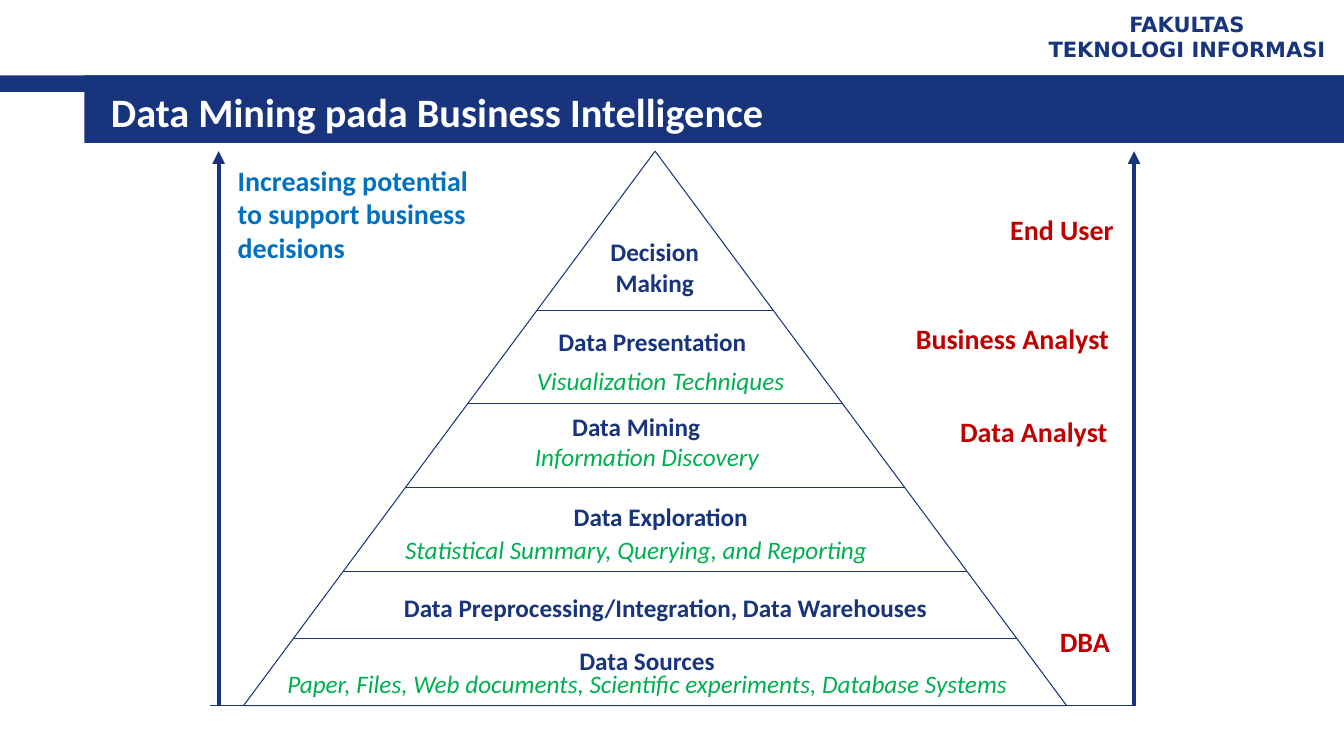
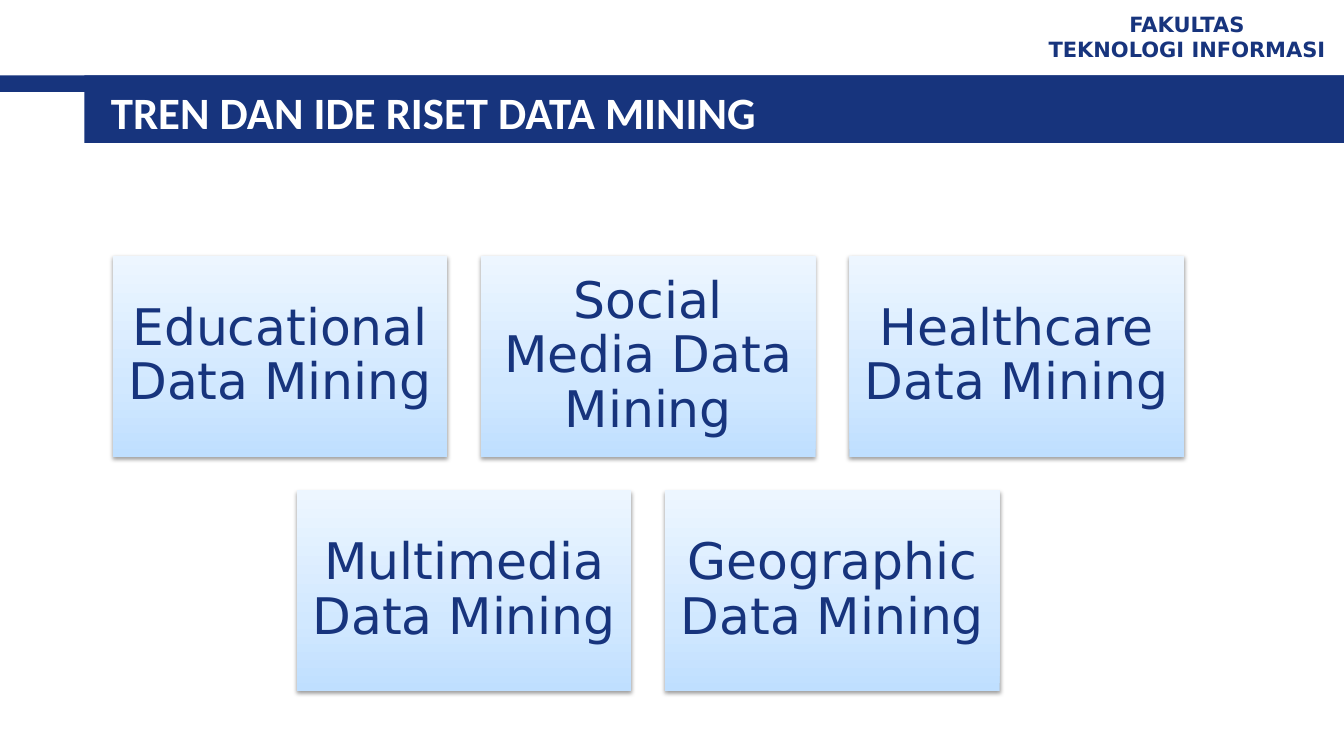
from lxml.etree import SubElement
from pptx import Presentation
from pptx.dml.color import RGBColor
from pptx.enum.shapes import MSO_CONNECTOR, MSO_SHAPE
from pptx.enum.text import MSO_ANCHOR, MSO_AUTO_SIZE, PP_ALIGN
from pptx.oxml import parse_xml
from pptx.oxml.ns import nsdecls, qn
from pptx.util import Cm, Pt

NAVY = RGBColor(0x17, 0x34, 0x7D)
BLUE = RGBColor(0x00, 0x70, 0xC0)
RED = RGBColor(0xC0, 0x00, 0x00)
GREEN = RGBColor(0x00, 0xB0, 0x50)
WHITE = RGBColor(0xFF, 0xFF, 0xFF)
SANS = "Calibri"
WIDE = "DejaVu Sans"
WIDTH, HEIGHT = 33.87, 19.05

# Pyramid: apex, base and half the base width, in cm
MID, TOP, BASE, HALF = 16.51, 3.81, 17.78, 10.37
LEVELS = (7.83, 10.16, 12.28, 14.39, 16.08)

# left, top, width, text
STAGES = (
    (13.82, 8.1, 5.28, "Data Presentation"),
    (14.17, 10.24, 4.95, "Data Mining"),
    (13.39, 12.5, 6.53, "Data Exploration"),
    (9.93, 14.81, 13.79, "Data Preprocessing/Integration, Data Warehouses"),
    (14.35, 16.13, 3.96, "Data Sources"),
)
METHODS = (
    (13.28, 9.09, 6.81, "Visualization Techniques"),
    (13.23, 11, 6.45, "Information Discovery"),
    (9.96, 13.34, 12.7, "Statistical Summary, Querying, and Reporting"),
    (6.99, 16.71, 19.76,
     "Paper, Files, Web documents, Scientific experiments, Database Systems"),
)
ROLES = (
    (25.02, 5.23, 3.3, "End User"),
    (21.16, 7.98, 7.04, "Business Analyst"),
    (23.11, 10.31, 5.05, "Data Analyst"),
    (26.22, 15.6, 2, "DBA"),
)
TOPIC_ROWS = (
    ("Educational Data Mining", "Social Media Data Mining",
     "Healthcare Data Mining"),
    ("Multimedia Data Mining", "Geographic Data Mining"),
)
STOPS = ((0, "BFDFFF"), (35, "D1E8FF"), (100, "EDF6FF"))


def style(para, size, color, face=SANS, bold=False, italic=False,
          align=PP_ALIGN.LEFT):
    para.alignment = align
    font = para.font
    font.name, font.size, font.color.rgb = face, Pt(size), color
    font.bold, font.italic = bold, italic


def add_label(slide, left, top, width, height, text, size, color, **look):
    box = slide.shapes.add_textbox(Cm(left), Cm(top), Cm(width), Cm(height))
    frame = box.text_frame
    frame.word_wrap = True
    frame.auto_size = MSO_AUTO_SIZE.SHAPE_TO_FIT_TEXT
    frame.text = text
    for para in frame.paragraphs:
        style(para, size, color, **look)
    return box


def add_shape(slide, kind, left, top, width, height):
    """Add a preset shape without outline or shadow."""
    shape = slide.shapes.add_shape(
        kind, Cm(left), Cm(top), Cm(width), Cm(height))
    shape.shadow.inherit = False
    shape.line.fill.background()
    return shape


def add_band(slide, left, height):
    band = add_shape(slide, MSO_SHAPE.RECTANGLE, left, 1.9,
                     WIDTH - left, height)
    band.fill.solid()
    band.fill.fore_color.rgb = NAVY
    return band


def add_line(slide, x1, y1, x2, y2, weight=0.75, arrow=False):
    line = slide.shapes.add_connector(
        MSO_CONNECTOR.STRAIGHT, Cm(x1), Cm(y1), Cm(x2), Cm(y2))
    line.line.color.rgb = NAVY
    line.line.width = Pt(weight)
    if arrow:
        SubElement(line.line._get_or_add_ln(), qn("a:tailEnd"),
                   type="triangle")
    SubElement(line._element.spPr, qn("a:effectLst"))


def add_card(slide, left, top, width, height, text):
    """Add a box with a gradient, a soft shadow and centred text."""
    card = add_shape(slide, MSO_SHAPE.RECTANGLE, left, top, width, height)
    props = card._element.spPr
    stops = "".join(
        f'<a:gs pos="{pos * 1000}"><a:srgbClr val="{color}"/></a:gs>'
        for pos, color in STOPS)
    props.find(qn("a:prstGeom")).addnext(parse_xml(
        f'<a:gradFill {nsdecls("a")} rotWithShape="1"><a:gsLst>{stops}'
        '</a:gsLst><a:lin ang="16200000" scaled="0"/></a:gradFill>'))
    props.find(qn("a:effectLst")).append(parse_xml(
        f'<a:outerShdw {nsdecls("a")} blurRad="40000" dist="20000" '
        'dir="5400000" rotWithShape="0"><a:srgbClr val="000000">'
        '<a:alpha val="38000"/></a:srgbClr></a:outerShdw>'))
    frame = card.text_frame
    frame.word_wrap = True
    frame.vertical_anchor = MSO_ANCHOR.MIDDLE
    frame.margin_left = frame.margin_right = Cm(0.38)
    frame.margin_top = frame.margin_bottom = Cm(0.38)
    frame.text = text
    para = frame.paragraphs[0]
    para.line_spacing = 0.9
    style(para, 36, NAVY, face=WIDE, align=PP_ALIGN.CENTER)


def dress_layout(layout, slide):
    """Draw the bands and faculty name, then move them into the layout."""
    for holder in list(layout.placeholders):
        if holder.placeholder_format.idx:
            holder._element.getparent().remove(holder._element)
    name = add_label(slide, 25.98, 0.13, 7.87, 1.57,
                     "FAKULTAS\nTEKNOLOGI INFORMASI", 15, NAVY, face=WIDE,
                     bold=True, align=PP_ALIGN.CENTER)
    name.text_frame.auto_size = MSO_AUTO_SIZE.NONE
    name.text_frame.vertical_anchor = MSO_ANCHOR.MIDDLE
    parts = (add_band(slide, 0, 0.42), add_band(slide, 2.13, 1.7), name)
    for place, part in enumerate(parts, 2):
        layout.shapes._spTree.insert(place, part._element)


def set_title(slide, text, size):
    title = slide.shapes.title
    title.left, title.top = Cm(2.54), Cm(2.03)
    title.width, title.height = Cm(30.2), Cm(1.57)
    frame = title.text_frame
    frame.auto_size = MSO_AUTO_SIZE.NONE
    frame.vertical_anchor = MSO_ANCHOR.MIDDLE
    frame.text = text
    style(frame.paragraphs[0], size, WHITE, bold=True)


def draw_pyramid(slide):
    outline = add_shape(slide, MSO_SHAPE.FLOWCHART_EXTRACT, MID - HALF, TOP,
                        2 * HALF, BASE - TOP)
    outline.fill.background()
    outline.line.color.rgb = NAVY
    outline.line.width = Pt(0.75)
    for level in LEVELS:
        reach = HALF * (level - TOP) / (BASE - TOP)
        add_line(slide, MID - reach, level, MID + reach, level)
    for side in (5.51, 28.58):
        add_line(slide, side, BASE, side, TOP, weight=3, arrow=True)
    add_line(slide, 5.28, BASE, 28.58, BASE)


def label_pyramid(slide):
    add_label(slide, 5.74, 3.99, 6.73, 2.82,
              "Increasing potential\nto support business decisions",
              20, BLUE, bold=True)
    for left, top, width, text in ROLES:
        add_label(slide, left, top, width, 1.12, text, 20, RED, bold=True,
                  align=PP_ALIGN.RIGHT)
    add_label(slide, 14.81, 5.84, 3.38, 1.78, "Decision Making", 18, NAVY,
              bold=True, align=PP_ALIGN.CENTER)
    for left, top, width, text in STAGES:
        centred = text == "Data Exploration"
        add_label(slide, left, top, width, 1.02, text, 18, NAVY, bold=True,
                  align=PP_ALIGN.CENTER if centred else PP_ALIGN.LEFT)
    for left, top, width, text in METHODS:
        add_label(slide, left, top, width, 1.02, text, 18, GREEN, italic=True)


def draw_topics(slide):
    """Lay the topics out in rows that share one centre."""
    width, height, gap, centre, top = 8.43, 5.06, 0.85, 16.34, 6.45
    for row, topics in enumerate(TOPIC_ROWS):
        span = len(topics) * (width + gap) - gap
        for col, topic in enumerate(topics):
            add_card(slide, centre - span / 2 + col * (width + gap),
                     top + row * (height + gap), width, height, topic)


def main():
    deck = Presentation()
    deck.slide_width, deck.slide_height = Cm(WIDTH), Cm(HEIGHT)
    layout = deck.slide_layouts.get_by_name("Title Only")

    slide = deck.slides.add_slide(layout)
    dress_layout(layout, slide)
    set_title(slide, "Data Mining pada Business Intelligence", 28.8)
    draw_pyramid(slide)
    label_pyramid(slide)

    slide = deck.slides.add_slide(layout)
    set_title(slide, "TREN DAN IDE RISET DATA MINING", 32)
    draw_topics(slide)

    deck.save("out.pptx")


if __name__ == "__main__":
    main()
